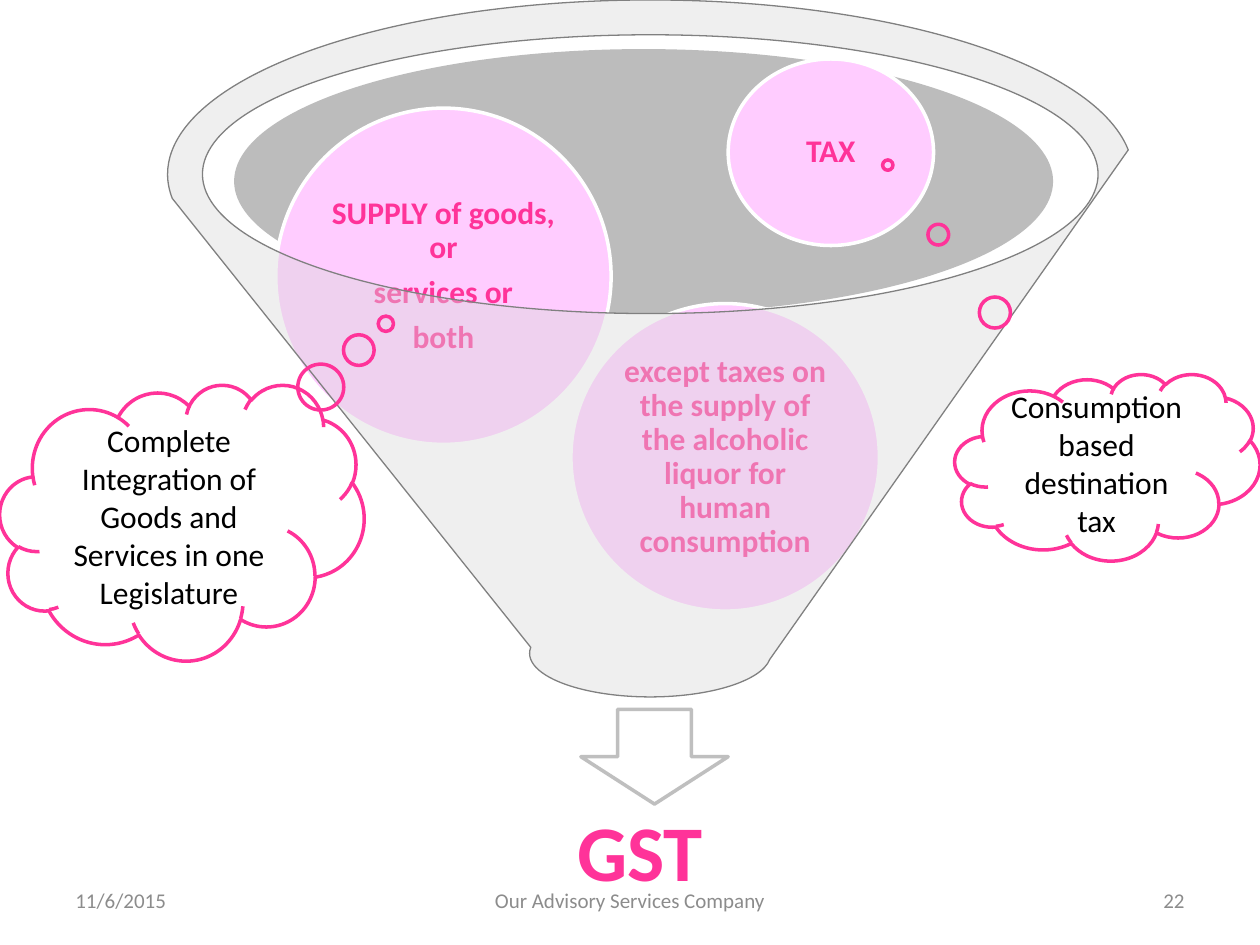
from lxml.etree import SubElement
from pptx import Presentation
from pptx.dml.color import RGBColor
from pptx.enum.shapes import MSO_SHAPE
from pptx.enum.text import MSO_ANCHOR, PP_ALIGN
from pptx.oxml.ns import qn
from pptx.util import Cm, Pt

PINK = RGBColor(0xFF, 0x33, 0x99)
LIGHT_PINK = RGBColor(0xFF, 0xCC, 0xFF)
WHITE = RGBColor(0xFF, 0xFF, 0xFF)
BLACK = RGBColor(0, 0, 0)
DARK_GRAY = RGBColor(0x59, 0x59, 0x59)
FUNNEL_GRAY = RGBColor(0xD9, 0xD9, 0xD9)
OUTLINE_GRAY = RGBColor(0x80, 0x80, 0x80)
ARROW_GRAY = RGBColor(0xBF, 0xBF, 0xBF)
FOOTER_GRAY = RGBColor(0x8C, 0x8C, 0x8C)


def write_text(shape, text, size=18, color=PINK, bold=False, align=PP_ALIGN.CENTER,
               line_spacing=1.0, space_after=0, margins=(0.25, 0.13)):
    frame = shape.text_frame
    frame.word_wrap = True
    frame.vertical_anchor = MSO_ANCHOR.MIDDLE
    frame.margin_left = frame.margin_right = Cm(margins[0])
    frame.margin_top = frame.margin_bottom = Cm(margins[1])
    frame.text = text
    for paragraph in frame.paragraphs:
        paragraph.alignment = align
        paragraph.line_spacing = line_spacing
        paragraph.space_after = Pt(space_after)
        font = paragraph.runs[0].font
        font.name = "Calibri"
        font.size = Pt(size)
        font.bold = bold
        font.color.rgb = color


def add_figure(slide, kind, box, fill=None, opacity=None, line=None, line_width=2):
    shape = slide.shapes.add_shape(kind, *map(Cm, box))
    shape.shadow.inherit = False
    if fill is None:
        shape.fill.background()
    else:
        shape.fill.solid()
        shape.fill.fore_color.rgb = fill
    if opacity is not None:
        color = shape.fill._xPr.find(qn("a:solidFill"))[0]
        SubElement(color, qn("a:alpha"), val=str(opacity * 1000))
    if line is None:
        shape.line.fill.background()
    else:
        shape.line.color.rgb = line
        shape.line.width = Pt(line_width)
    return shape


def add_label(slide, box, text, **text_format):
    label = slide.shapes.add_textbox(*map(Cm, box))
    write_text(label, text, **text_format)


def add_ball(slide, box, text):
    ball = add_figure(slide, MSO_SHAPE.OVAL, box, fill=LIGHT_PINK, line=WHITE)
    write_text(ball, text, bold=True, line_spacing=0.9, space_after=6.3,
               margins=(0.08, 0.08))


def add_cloud(slide, box, tail, text):
    cloud = add_figure(slide, MSO_SHAPE.CLOUD_CALLOUT, box, line=PINK)
    cloud.adjustments[0], cloud.adjustments[1] = tail
    write_text(cloud, text, color=BLACK)


def add_funnel(slide):
    add_figure(slide, MSO_SHAPE.OVAL, (4.72, 0.99, 16.51, 5.33), fill=DARK_GRAY, opacity=40)
    add_figure(slide, MSO_SHAPE.DOWN_ARROW, (11.71, 14.3, 2.97, 1.91),
               fill=WHITE, line=ARROW_GRAY)
    add_label(slide, (5.77, 15.47, 14.27, 3.58), "GST", size=45, bold=True,
              line_spacing=0.9, space_after=15.75, margins=(0.89, 0.89))
    add_ball(slide, (11.51, 6.12, 6.22, 6.2),
             "except taxes on the supply of the alcoholic liquor for human consumption")
    add_ball(slide, (5.56, 2.18, 6.76, 6.78), "SUPPLY of goods, or\nservices or\nboth")
    add_ball(slide, (14.68, 1.19, 4.14, 3.76), "TAX")
    add_figure(slide, MSO_SHAPE.FUNNEL, (3.38, 0, 19.46, 14.05), fill=FUNNEL_GRAY,
               opacity=40, line=OUTLINE_GRAY, line_width=0.75)


def add_footer(slide):
    for left, width, text, align in (
        (1.27, 5.93, "11/6/2015", PP_ALIGN.LEFT),
        (8.68, 8.04, "Our Advisory Services Company", PP_ALIGN.CENTER),
        (18.2, 5.93, "22", PP_ALIGN.RIGHT),
    ):
        add_label(slide, (left, 17.65, width, 1.01), text, size=12,
                  color=FOOTER_GRAY, align=align)


def main():
    presentation = Presentation()
    presentation.slide_width = Cm(25.4)
    presentation.slide_height = Cm(19.05)
    slide = presentation.slides.add_slide(presentation.slide_layouts[6])
    add_funnel(slide)
    add_footer(slide)
    add_cloud(slide, (0, 7.75, 7.34, 5.56), (0.56, -0.72),
              "Complete Integration of Goods and Services in one Legislature")
    add_cloud(slide, (19.25, 7.54, 6.15, 3.76), (-0.72, -1.62),
              "Consumption based destination tax")
    presentation.save("out.pptx")


if __name__ == "__main__":
    main()
